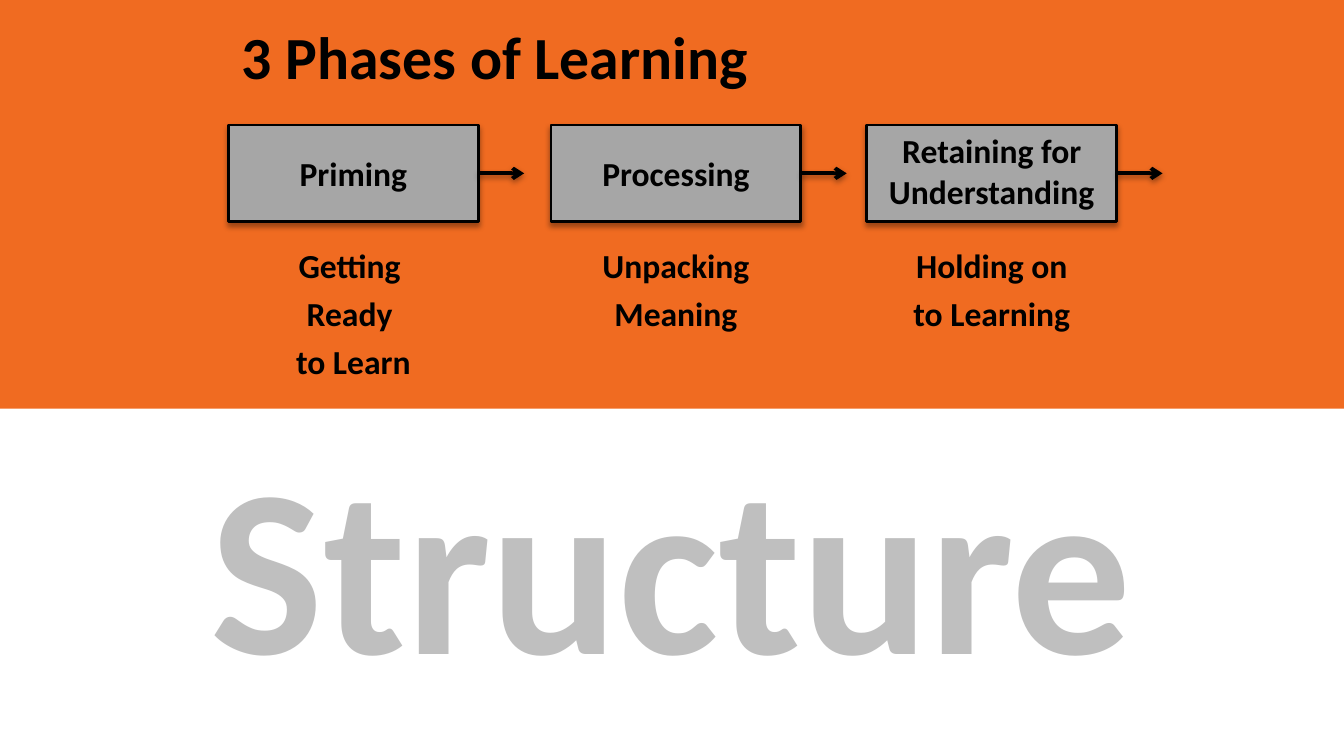
from dataclasses import dataclass

from lxml.etree import SubElement as Sub
from pptx import Presentation
from pptx.dml.color import RGBColor as RGB
from pptx.enum.shapes import MSO_CONNECTOR as Link, MSO_SHAPE as Kind
from pptx.enum.text import MSO_ANCHOR as Anchor, MSO_AUTO_SIZE as Fit, PP_ALIGN as Align
from pptx.oxml.ns import qn
from pptx.util import Inches, Pt


@dataclass(frozen=True)
class Theme:
    font: str = "Calibri"
    band: RGB = RGB(0xF0, 0x6B, 0x21)
    box: RGB = RGB(0xA6, 0xA6, 0xA6)
    ink: RGB = RGB(0, 0, 0)
    pale: RGB = RGB(0xBF, 0xBF, 0xBF)
    title: int = 32
    body: int = 18
    huge: int = 128


THEME = Theme()
WIDTH, HEIGHT = 10, 10 * 9 / 16
BOX_TOP, BOX_W, BOX_H = 0.93, 1.86, 0.72
LABEL_W, ARROW = 2.04, 0.34
PHASES = [
    (1.7, ["Priming"], 1.1, 1.86, ["Getting ", "Ready ", "to Learn"]),
    (4.1, ["Processing"], 1.1, 1.86, ["Unpacking", "Meaning"]),
    (6.45, ["Retaining for", "Understanding"], 0.93, 1.95, ["Holding on", "to Learning"]),
]


def write(frame, lines, size=THEME.body, color=THEME.ink, align=Align.CENTER,
          space=1.0, wrap=True):
    frame.word_wrap = wrap
    frame.auto_size = Fit.NONE
    frame.vertical_anchor = Anchor.TOP
    for i, line in enumerate(lines):
        para = frame.add_paragraph() if i else frame.paragraphs[0]
        para.alignment = align
        para.line_spacing = space
        run = para.add_run()
        run.text = line
        font = run.font
        font.name, font.size, font.bold = THEME.font, Pt(size), True
        font.color.rgb = color


def add_text(slide, left, top, width, height, lines, pad=(0.07, 0.04), **style):
    area = slide.shapes.add_textbox(*map(Inches, (left, top, width, height)))
    frame = area.text_frame
    frame.margin_left = frame.margin_right = Inches(pad[0])
    frame.margin_top = frame.margin_bottom = Inches(pad[1])
    write(frame, lines, **style)


def add_shade(shape, dist, alpha):
    effects = Sub(shape.element.spPr, qn("a:effectLst"))
    shade = Sub(effects, qn("a:outerShdw"), blurRad=str(Pt(3.1)), dist=str(Pt(dist)),
                dir="5400000", rotWithShape="0")
    tint = Sub(shade, qn("a:srgbClr"), val=str(THEME.ink))
    Sub(tint, qn("a:alpha"), val=str(alpha * 1000))


def add_rect(slide, left, top, width, height, fill):
    rect = slide.shapes.add_shape(Kind.RECTANGLE, *map(Inches, (left, top, width, height)))
    rect.fill.solid()
    rect.fill.fore_color.rgb = fill
    return rect


def add_band(slide):
    band = add_rect(slide, 0, -0.01, WIDTH, 3.05, THEME.band)
    band.line.fill.background()
    band.shadow.inherit = False
    band.element.getparent().insert(2, band.element)


def add_box(slide, left):
    box = add_rect(slide, left, BOX_TOP, BOX_W, BOX_H, THEME.box)
    box.line.color.rgb = THEME.ink
    box.line.width = Pt(1.5)
    add_shade(box, 1.8, 35)
    return box


def add_arrow(slide, box, left):
    start, mid = left + BOX_W, BOX_TOP + BOX_H / 2
    arrow = slide.shapes.add_connector(
        Link.STRAIGHT, *map(Inches, (start, mid, start + ARROW, mid)))
    arrow.begin_connect(box, 3)
    arrow.line.color.rgb = THEME.ink
    arrow.line.width = Pt(2)
    Sub(arrow.element.spPr.find(qn("a:ln")), qn("a:tailEnd"), type="arrow")
    add_shade(arrow, 1.6, 38)


def add_phase(slide, left, label, top, width, notes):
    box = add_box(slide, left)
    add_arrow(slide, box, left)
    mid = left + BOX_W / 2
    add_text(slide, mid - LABEL_W / 2, top, LABEL_W, 0.08 + 0.3 * len(label), label)
    add_text(slide, mid - width / 2, 1.72, width, 0.08 + 0.35 * len(notes), notes, space=1.2)


def add_title(slide, text):
    title = slide.shapes.title
    title.left, title.top, title.width, title.height = map(Inches, (1.7, 0.1, 4, 0.64))
    write(title.text_frame, [text], size=THEME.title, align=Align.LEFT, wrap=False)


def main():
    deck = Presentation()
    deck.slide_width, deck.slide_height = Inches(WIDTH), Inches(HEIGHT)
    slide = deck.slides.add_slide(deck.slide_layouts[5])
    add_title(slide, "3 Phases of Learning")
    add_band(slide)
    for phase in PHASES:
        add_phase(slide, *phase)
    add_text(slide, 0, 3.04, WIDTH, 2.26, ["Structure"], pad=(0.1, 0.05),
             size=THEME.huge, color=THEME.pale)
    deck.save("out.pptx")


if __name__ == "__main__":
    main()
